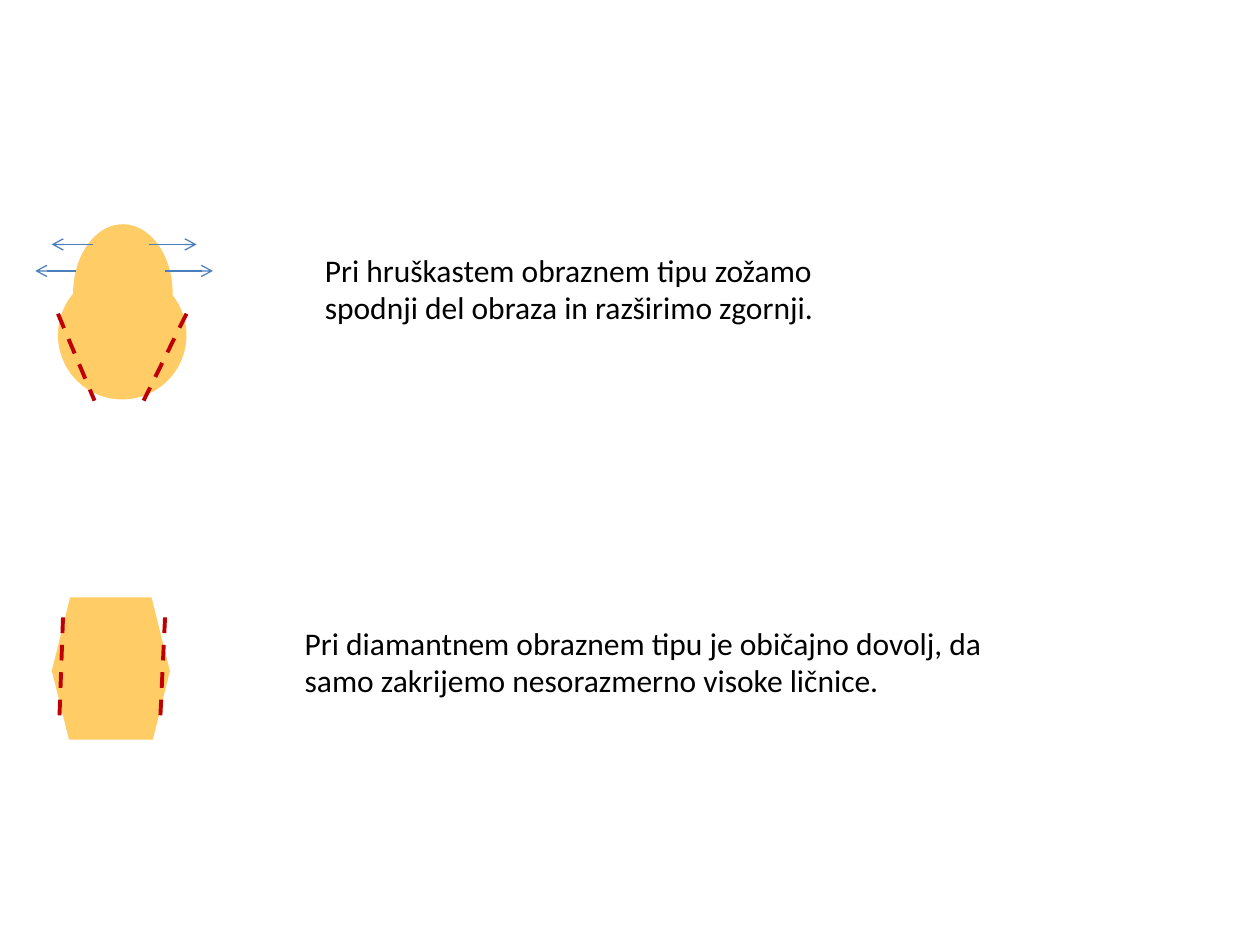
from dataclasses import dataclass

from lxml import etree
from pptx import Presentation
from pptx.dml.color import RGBColor
from pptx.enum.dml import MSO_LINE
from pptx.enum.shapes import MSO_CONNECTOR, MSO_SHAPE
from pptx.enum.text import MSO_AUTO_SIZE
from pptx.oxml.ns import qn
from pptx.util import Inches, Pt

ELLIPSE, TRAPEZOID = MSO_SHAPE.OVAL, MSO_SHAPE.TRAPEZOID
STRAIGHT, DASH = MSO_CONNECTOR.STRAIGHT, MSO_LINE.DASH
GROW = MSO_AUTO_SIZE.SHAPE_TO_FIT_TEXT
BLANK_LAYOUT = 6
COLUMNS, ROWS = 100, 75


@dataclass(frozen=True)
class Theme:
    face: RGBColor = RGBColor(0xFF, 0xCC, 0x66)
    shading: RGBColor = RGBColor(0xC0, 0x00, 0x00)
    widening: RGBColor = RGBColor(0x4B, 0x7E, 0xBC)
    text: RGBColor = RGBColor(0x00, 0x00, 0x00)
    font: str = "Calibri"
    text_size: float = 18
    shading_width: float = 2.25
    widening_width: float = 0.75


class FacePage:
    """Draws on one slide; every length is in grid columns and rows."""

    def __init__(self, deck, theme):
        self.theme = theme
        self.slide = deck.slides.add_slide(deck.slide_layouts[BLANK_LAYOUT])
        self.column = deck.slide_width / COLUMNS
        self.row = deck.slide_height / ROWS

    def place(self, column, row):
        return round(column * self.column), round(row * self.row)

    def face_part(self, preset, left, top, width, height, rotation=0):
        part = self.slide.shapes.add_shape(
            preset, *self.place(left, top), *self.place(width, height))
        part.rotation = rotation
        part.shadow.inherit = False
        part.fill.solid()
        part.fill.fore_color.rgb = self.theme.face
        part.line.fill.background()

    def line(self, start, end, color, width):
        connector = self.slide.shapes.add_connector(
            STRAIGHT, *self.place(*start), *self.place(*end))
        connector.line.color.rgb = color
        connector.line.width = Pt(width)
        etree.SubElement(connector._element.spPr, qn("a:effectLst"))
        return connector.line

    def shading_line(self, start, end):
        line = self.line(start, end, self.theme.shading, self.theme.shading_width)
        line.dash_style = DASH

    def widening_arrow(self, row, start, end):
        line = self.line((start, row), (end, row),
                         self.theme.widening, self.theme.widening_width)
        etree.SubElement(line._get_or_add_ln(), qn("a:tailEnd"), type="arrow")

    def advice(self, text, left, top, width, height):
        box = self.slide.shapes.add_textbox(
            *self.place(left, top), *self.place(width, height))
        frame = box.text_frame
        frame.word_wrap = True
        frame.auto_size = GROW
        para = frame.paragraphs[0]
        para.text = text
        para.font.name = self.theme.font
        para.font.size = Pt(self.theme.text_size)
        para.font.color.rgb = self.theme.text


def draw_pear_face(page):
    page.face_part(ELLIPSE, 4.6, 21.5, 10.2, 10.2)
    page.face_part(ELLIPSE, 5.8, 17.8, 7.9, 11)
    for outer, inner in ((14.8, 11.4), (4.6, 7.5)):
        page.shading_line((outer, 24.9), (inner, 31.8))
    for row, left_start, left_end, right_start, right_end in (
            (21.5, 6, 2.8, 13.1, 16.9), (19.4, 7.4, 4.1, 11.8, 15.6)):
        page.widening_arrow(row, right_start, right_end)
        page.widening_arrow(row, left_start, left_end)
    page.advice("Pri hruškastem obraznem tipu zožamo spodnji del obraza "
                "in razširimo zgornji.", 24.8, 19.4, 43.3, 7.1)


def draw_diamond_face(page):
    page.face_part(TRAPEZOID, 4.1, 47.4, 9.4, 5.9)
    page.face_part(TRAPEZOID, 4.1, 53.2, 9.4, 5.5, rotation=180)
    for upper, lower in ((13.1, 12.7), (5, 4.7)):
        page.shading_line((upper, 49), (lower, 57.5))
    page.advice("Pri diamantnem obraznem tipu je običajno dovolj, da samo "
                "zakrijemo nesorazmerno visoke ličnice.", 23.2, 49, 61.4, 7.1)


def main():
    deck = Presentation()
    deck.slide_width, deck.slide_height = Inches(10), Inches(7.5)
    page = FacePage(deck, Theme())
    draw_pear_face(page)
    draw_diamond_face(page)
    deck.save("out.pptx")


if __name__ == "__main__":
    main()
